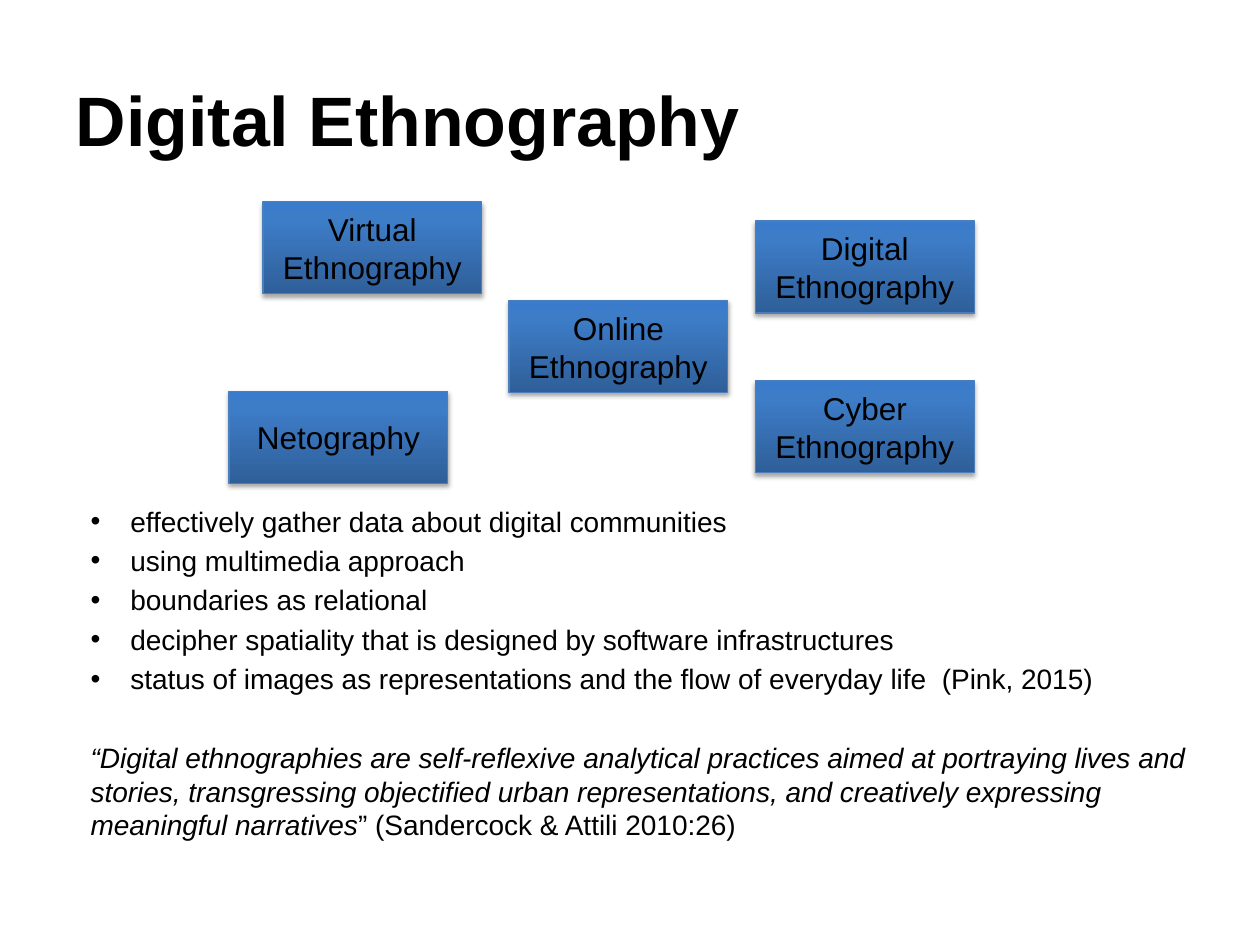
from lxml import etree
from pptx import Presentation
from pptx.dml.color import RGBColor
from pptx.enum.shapes import MSO_SHAPE
from pptx.enum.text import MSO_ANCHOR, PP_ALIGN
from pptx.oxml import parse_xml
from pptx.oxml.ns import nsdecls, qn
from pptx.util import Cm, Pt

COLORS = {"text": "000000", "edge": "4B7EBC", "shadow": "000000",
          "bottom": "2F5F99", "middle": "3D7CC7", "top": "3A7CCB"}


def add_span(para, text, **formats):
    span = para.add_run()
    span.text = text
    span.font.color.rgb = RGBColor.from_string(COLORS["text"])
    for name, value in {"name": "Arial", **formats}.items():
        setattr(span.font, name, value)


def add_text_frame(page, left, top, width, height, anchor):
    box = page.shapes.add_textbox(Cm(left), Cm(top), Cm(width), Cm(height))
    frame = box.text_frame
    formats = {"word_wrap": True, "vertical_anchor": anchor,
               "margin_left": Cm(0.28), "margin_right": Cm(0.28),
               "margin_top": Cm(0.16), "margin_bottom": Cm(0.16)}
    for name, value in formats.items():
        setattr(frame, name, value)
    return frame


deck = Presentation()
deck.slide_width, deck.slide_height = Cm(28.22), Cm(21.16)
page = deck.slides.add_slide(deck.slide_layouts[6])

# Title
title = add_text_frame(page, 1.42, 0.84, 24.89, 4.09, MSO_ANCHOR.MIDDLE)
title.paragraphs[0].line_spacing = 0.7
add_span(title.paragraphs[0], "Digital Ethnography", size=Pt(44.4), bold=True)

# Boxes with the names of the method
methods = [("Virtual Ethnography", 5.89, 4.52),
           ("Digital Ethnography", 16.92, 4.95),
           ("Cyber Ethnography", 16.92, 8.53),
           ("Online Ethnography", 11.4, 6.73),
           ("Netography", 5.13, 8.76)]
stops = "".join(f'<a:gs pos="{position}"><a:srgbClr val="{COLORS[name]}"/></a:gs>'
                for position, name in [(0, "bottom"), (80000, "middle"), (100000, "top")])
gradient = (f'<a:gradFill {nsdecls("a")} rotWithShape="1"><a:gsLst>{stops}</a:gsLst>'
            '<a:lin ang="16200000" scaled="0"/></a:gradFill>')
shadow = (f'<a:effectLst {nsdecls("a")}><a:outerShdw blurRad="{Pt(3.1)}" dist="{Pt(1.8)}" '
          f'dir="5400000" rotWithShape="0"><a:srgbClr val="{COLORS["shadow"]}">'
          '<a:alpha val="35000"/></a:srgbClr></a:outerShdw></a:effectLst>')
for text, left, top in methods:
    box = page.shapes.add_shape(MSO_SHAPE.RECTANGLE, Cm(left), Cm(top), Cm(4.9), Cm(2.06))
    box.shadow.inherit = False
    box.line.color.rgb = RGBColor.from_string(COLORS["edge"])
    box.line.width = Pt(0.75)
    properties = box._element.spPr
    properties.find(qn("a:prstGeom")).addnext(parse_xml(gradient))
    properties.replace(properties.find(qn("a:effectLst")), parse_xml(shadow))
    box.text_frame.word_wrap = True
    box.text_frame.vertical_anchor = MSO_ANCHOR.MIDDLE
    para = box.text_frame.paragraphs[0]
    para.alignment = PP_ALIGN.CENTER
    add_span(para, text, size=Pt(20))

# Bullet list
points = ["effectively gather data about digital communities",
          "using multimedia approach",
          "boundaries as relational",
          "decipher spatiality that is designed by software infrastructures",
          "status of images as representations and the flow of everyday life  (Pink, 2015)"]
body = add_text_frame(page, 1.75, 11.13, 25.4, 8.33, MSO_ANCHOR.TOP)
for index, point in enumerate(points):
    para = body.add_paragraph() if index else body.paragraphs[0]
    para.space_before = Pt(3.6)
    settings = para._p.get_or_add_pPr()
    settings.set("marL", str(Cm(0.89)))
    settings.set("indent", str(-Cm(0.89)))
    etree.SubElement(settings, qn("a:buFont"), typeface="Arial")
    etree.SubElement(settings, qn("a:buChar"), char="•")
    add_span(para, point, size=Pt(17.8))

# Quotation
para = body.add_paragraph()
para.space_before = Pt(28.8)
add_span(para, "“Digital ethnographies are self-reflexive analytical practices aimed at "
         "portraying lives and stories, transgressing objectified urban representations, "
         "and creatively expressing meaningful narratives", size=Pt(17.8), italic=True)
add_span(para, "” (Sandercock & Attili 2010:26)", size=Pt(17.8))

deck.save("out.pptx")
